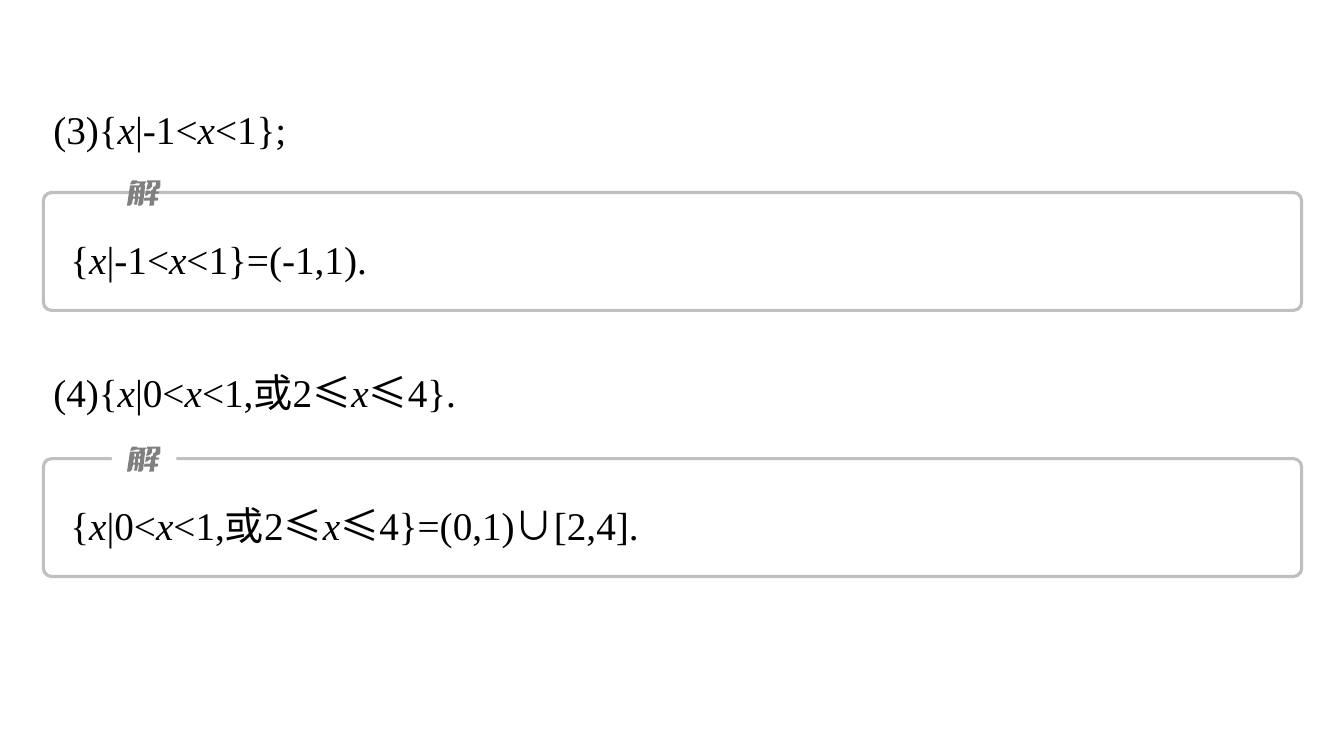
from itertools import groupby

from lxml.etree import SubElement
from pptx import Presentation
from pptx.dml.color import RGBColor
from pptx.enum.shapes import MSO_SHAPE
from pptx.enum.text import MSO_ANCHOR, MSO_AUTO_SIZE
from pptx.oxml.ns import qn
from pptx.util import Inches, Pt

BLACK = RGBColor(0x00, 0x00, 0x00)
WHITE = RGBColor(0xFF, 0xFF, 0xFF)
FRAME_GRAY = RGBColor(0xBF, 0xBF, 0xBF)
LABEL_GRAY = RGBColor(0x80, 0x80, 0x80)
MATH_FONT = "Times New Roman"
SYMBOL_FONT = "Noto Sans CJK SC"

# Outline of the slanted 解 label, in hundredths of an inch
LABEL_CONTOURS = [
    [(11, 12), (11, 16), (13, 16), (13, 12)],
    [(7, 12), (6, 16), (8, 16), (8, 12)],
    [(25, 9), (29, 9), (29, 11), (32, 11), (32, 12), (31, 13), (28, 13),
     (28, 17), (31, 17), (31, 19), (30, 20), (27, 20), (27, 24), (26, 25),
     (22, 25), (23, 20), (17, 20), (17, 18), (18, 17), (23, 17), (24, 13),
     (22, 13), (21, 14), (20, 15), (18, 15), (19, 10), (23, 10), (23, 11),
     (24, 11), (24, 10)],
    [(12, 7), (12, 10), (13, 10), (14, 7)],
    [(20, 0), (33, 0), (33, 6), (32, 8), (29, 9), (26, 9), (26, 7), (27, 6),
     (28, 6), (29, 2), (25, 2), (25, 6), (23, 8), (21, 9), (19, 9), (21, 2),
     (19, 2), (20, 1)],
    [(5, 0), (10, 0), (10, 1), (19, 1), (17, 5), (18, 5), (16, 23), (15, 24),
     (14, 25), (11, 25), (12, 18), (11, 18), (10, 24), (7, 24), (8, 18),
     (6, 18), (5, 23), (4, 24), (3, 25), (0, 25), (3, 5), (8, 5), (7, 10),
     (9, 10), (9, 7), (8, 7), (8, 5), (12, 5), (13, 3), (9, 3), (6, 4),
     (3, 4)],
]


def run_style(char):
    """Return (font, italic) for one character of a formula."""
    return (SYMBOL_FONT if char in "≤∪" else MATH_FONT), char == "x"


class ExerciseSlide:
    def __init__(self, presentation):
        self.shapes = presentation.slides.add_slide(
            presentation.slide_layouts[6]).shapes
        self.size = Pt(28)

    def formula(self, content, left, top, width, height):
        box = self.shapes.add_textbox(
            Inches(left), Inches(top), Inches(width), Inches(height))
        frame = box.text_frame
        frame.word_wrap = True
        frame.auto_size = MSO_AUTO_SIZE.SHAPE_TO_FIT_TEXT
        frame.vertical_anchor = MSO_ANCHOR.TOP
        paragraph = frame.paragraphs[0]
        paragraph.line_spacing = 1.5
        for (font_name, italic), chars in groupby(content, run_style):
            run = paragraph.add_run()
            run.text = "".join(chars)
            run.font.name = font_name
            run.font.size = self.size
            run.font.italic = italic
            run.font.color.rgb = BLACK
            SubElement(run.font._element, qn("a:ea"), typeface=SYMBOL_FONT)

    def frame(self, left, top, width, height):
        border = self.shapes.add_shape(
            MSO_SHAPE.ROUNDED_RECTANGLE,
            Inches(left), Inches(top), Inches(width), Inches(height))
        border.adjustments[0] = 0.07
        border.shadow.inherit = False
        border.fill.background()
        border.line.color.rgb = FRAME_GRAY
        border.line.width = Pt(2.25)

    def filled(self, shape, color):
        shape.shadow.inherit = False
        shape.fill.solid()
        shape.fill.fore_color.rgb = color
        shape.line.fill.background()

    def gap(self, left, top, width, height):
        cover = self.shapes.add_shape(
            MSO_SHAPE.RECTANGLE,
            Inches(left), Inches(top), Inches(width), Inches(height))
        self.filled(cover, WHITE)

    def label(self, left, top):
        first, *others = LABEL_CONTOURS
        builder = self.shapes.build_freeform(*first[0], scale=Inches(0.01))
        builder.add_line_segments(first[1:], close=True)
        for contour in others:
            builder.move_to(*contour[0])
            builder.add_line_segments(contour[1:], close=True)
        self.filled(builder.convert_to_shape(Inches(left), Inches(top)),
                    LABEL_GRAY)

    def solution(self, content, top, has_gap):
        self.frame(0.43, top, 12.48, 1.17)
        if has_gap:
            self.gap(1.11, top - 0.13, 0.64, 0.24)
        self.label(1.26, top - 0.12)
        self.formula(content, 0.6, top + 0.14, 12.05, 0.73)


def main():
    presentation = Presentation()
    presentation.slide_width = Inches(13.33)
    presentation.slide_height = Inches(7.5)
    slide = ExerciseSlide(presentation)

    # Exercise 3
    slide.formula("(3){x|-1<x<1};", 0.43, 0.76, 12.48, 0.73)
    slide.solution("{x|-1<x<1}=(-1,1).", 1.91, has_gap=False)

    # Exercise 4
    slide.formula("(4){x|0<x<1,或2≤x≤4}.", 0.43, 3.37, 5.85, 0.81)
    slide.solution("{x|0<x<1,或2≤x≤4}=(0,1)∪[2,4].", 4.55, has_gap=True)

    presentation.save("out.pptx")


if __name__ == "__main__":
    main()
